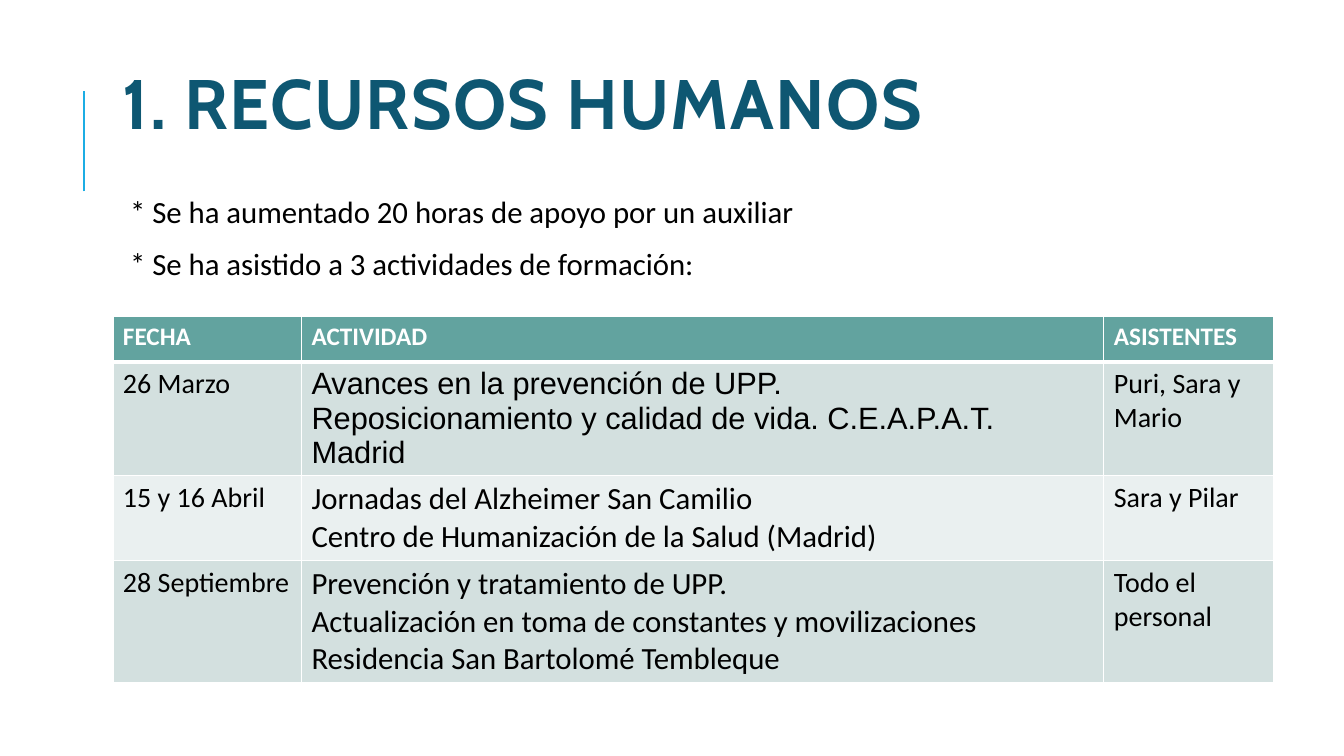
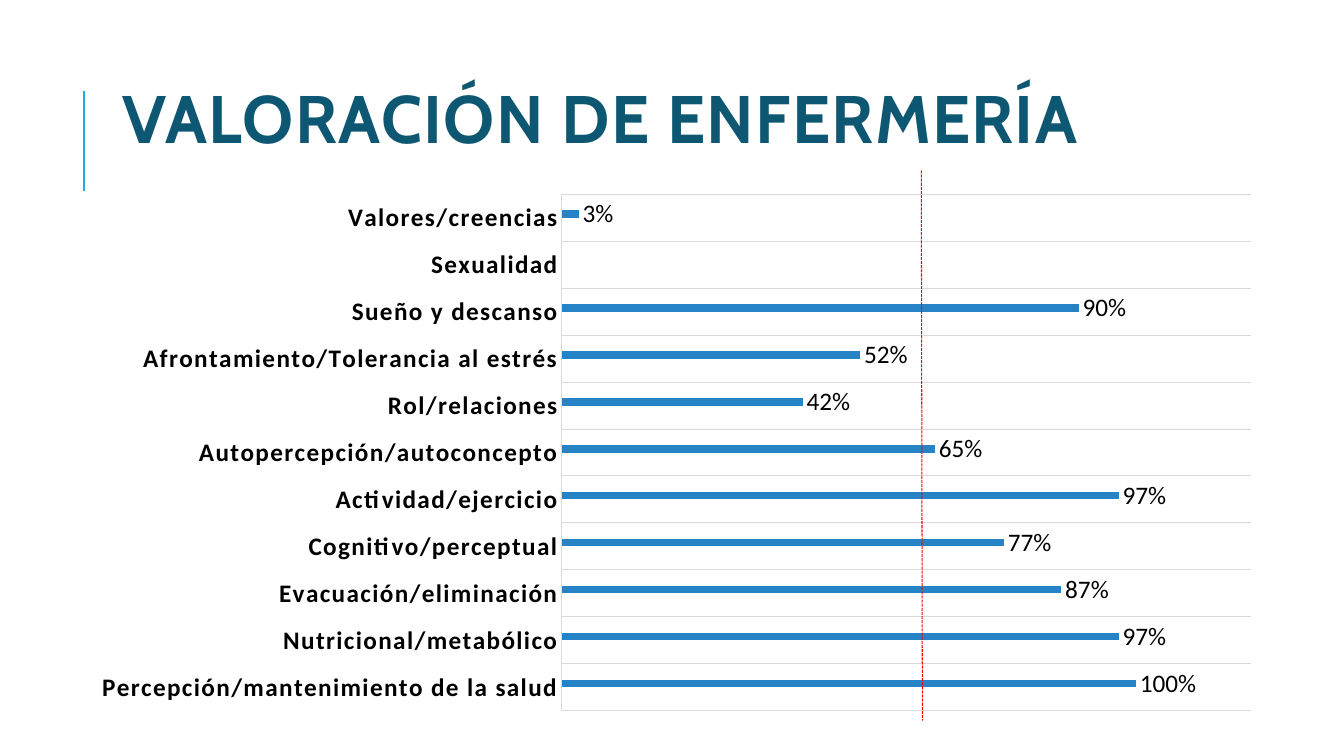
from dataclasses import dataclass

import lxml.etree
import pptx
import pptx.chart.data
import pptx.dml.color
import pptx.enum.chart
import pptx.enum.dml
import pptx.enum.shapes
import pptx.enum.text
import pptx.oxml.ns
import pptx.presentation
import pptx.shapes.base
import pptx.shapes.connector
import pptx.slide
import pptx.util

SLIDE_WIDTH = pptx.util.Inches(13.333)
SLIDE_HEIGHT = pptx.util.Inches(7.5)
TITLE_AND_BODY, TITLE_ONLY = 1, 5
BODY_FONT = "Calibri"
TITLE_FONT = "Cabin"
LETTER_SPACING = "100"
COLORS = {
    "title": "0E5772",
    "accent": "1CADE4",
    "text": "000000",
    "white": "FFFFFF",
    "header": "62A39F",
    "band_dark": "D3E0DF",
    "band_light": "EAF0F0",
    "bar": "2683C6",
    "grid": "D9D9D9",
    "threshold": "FF0000",
}


def across(percent: float) -> int:
    return round(SLIDE_WIDTH * percent / 100)


def down(percent: float) -> int:
    return round(SLIDE_HEIGHT * percent / 100)


@dataclass(frozen=True)
class Box:
    """Shares of the slide's width and height, in percent."""

    left: float
    top: float
    width: float
    height: float

    def lengths(self) -> tuple[int, int, int, int]:
        return across(self.left), down(self.top), across(self.width), down(self.height)


@dataclass(frozen=True)
class Rule:
    begin: tuple[float, float]
    end: tuple[float, float]
    color: str
    width: float
    dash: pptx.enum.dml.MSO_LINE = pptx.enum.dml.MSO_LINE.SOLID


@dataclass(frozen=True)
class Activity:
    date: str
    description: str
    attendees: str
    description_font: str = BODY_FONT


@dataclass(frozen=True)
class Pattern:
    name: str
    percent: int | None


TITLE_RULE = Rule((6.25, 25.33), (6.25, 12), "accent", 1.5)
THRESHOLD_RULE = Rule(
    (68.55, 22.53), (68.63, 95.33), "threshold", 0.75, pptx.enum.dml.MSO_LINE.SQUARE_DOT
)

STAFF_POINTS = (
    "* Se ha aumentado 20 horas de apoyo por un auxiliar",
    "* Se ha asistido a 3 actividades de formación:",
)
COLUMN_WIDTHS = (14.03, 59.7, 12.6)
ROW_HEIGHTS = (6, 10.67, 10.67, 15.2)
HEADINGS = ("FECHA", "ACTIVIDAD", "ASISTENTES")
ACTIVITIES = (
    Activity(
        "26 Marzo",
        "Avances en la prevención de UPP.\n"
        "Reposicionamiento y calidad de vida. C.E.A.P.A.T. Madrid",
        "Puri, Sara y Mario",
        "Arial",
    ),
    Activity(
        "15 y 16 Abril",
        "Jornadas del Alzheimer San Camilio\nCentro de Humanización de la Salud (Madrid)",
        "Sara y Pilar",
    ),
    Activity(
        "28 Septiembre",
        "Prevención y tratamiento de UPP.\n"
        "Actualización en toma de constantes y movilizaciones\n"
        "Residencia San Bartolomé Tembleque",
        "Todo el personal",
    ),
)
PATTERNS = (
    Pattern("Percepción/mantenimiento de la salud", 100),
    Pattern("Nutricional/metabólico", 97),
    Pattern("Evacuación/eliminación", 87),
    Pattern("Cognitivo/perceptual", 77),
    Pattern("Actividad/ejercicio", 97),
    Pattern("Autopercepción/autoconcepto", 65),
    Pattern("Rol/relaciones", 42),
    Pattern("Afrontamiento/Tolerancia al estrés", 52),
    Pattern("Sueño y descanso", 90),
    Pattern("Sexualidad", None),
    Pattern("Valores/creencias", 3),
)


def rgb(name: str) -> pptx.dml.color.RGBColor:
    return pptx.dml.color.RGBColor.from_string(COLORS[name])


def add_child(parent: lxml.etree.ElementBase, tag: str, **attributes: str):
    return lxml.etree.SubElement(parent, pptx.oxml.ns.qn(tag), **attributes)


def format_font(font, size: float, color: str = "text", bold: bool = False,
                name: str = BODY_FONT) -> None:
    font.name = name
    font.size = pptx.util.Pt(size)
    font.bold = bold
    font.color.rgb = rgb(color)


def place(shape: pptx.shapes.base.BaseShape, box: Box) -> None:
    shape.left, shape.top, shape.width, shape.height = box.lengths()


def add_rule(slide: pptx.slide.Slide, rule: Rule) -> pptx.shapes.connector.Connector:
    connector = slide.shapes.add_connector(
        pptx.enum.shapes.MSO_CONNECTOR.STRAIGHT,
        across(rule.begin[0]), down(rule.begin[1]),
        across(rule.end[0]), down(rule.end[1]),
    )
    connector.line.color.rgb = rgb(rule.color)
    connector.line.width = pptx.util.Pt(rule.width)
    connector.line.dash_style = rule.dash
    add_child(connector.element.spPr, "a:effectLst")
    return connector


def add_master_rule(presentation: pptx.presentation.Presentation,
                    slide: pptx.slide.Slide) -> None:
    element = add_rule(slide, TITLE_RULE).element
    element.xpath("./p:nvCxnSpPr/p:cNvPr")[0].set("id", "20")
    presentation.slide_master.shapes.element.append(element)


def add_titled_slide(presentation: pptx.presentation.Presentation, layout: int,
                     text: str, box: Box, size: float) -> pptx.slide.Slide:
    slide = presentation.slides.add_slide(presentation.slide_layouts[layout])
    title = slide.shapes.title
    place(title, box)
    title.text_frame.text = text
    title.text_frame.auto_size = pptx.enum.text.MSO_AUTO_SIZE.NONE
    title.text_frame.vertical_anchor = pptx.enum.text.MSO_ANCHOR.MIDDLE
    paragraph = title.text_frame.paragraphs[0]
    paragraph.alignment = pptx.enum.text.PP_ALIGN.LEFT
    paragraph.line_spacing = 0.8
    format_font(paragraph.runs[0].font, size, "title", True, TITLE_FONT)
    title.element.xpath(".//a:rPr")[0].set("spc", LETTER_SPACING)
    return slide


def fill_body(slide: pptx.slide.Slide, box: Box) -> None:
    body = slide.placeholders[1]
    place(body, box)
    frame = body.text_frame
    frame.text = "\n".join(STAFF_POINTS)
    frame.auto_size = pptx.enum.text.MSO_AUTO_SIZE.NONE
    frame.margin_left = frame.margin_right = pptx.util.Inches(0.05)
    for paragraph in frame.paragraphs:
        paragraph.line_spacing = 0.9
        paragraph.space_before = pptx.util.Pt(12)
        paragraph.space_after = pptx.util.Pt(2)
        format_font(paragraph.runs[0].font, 22)
    for properties in body.element.xpath(".//a:pPr"):
        properties.set("marL", str(pptx.util.Inches(0.12)))
        properties.set("indent", "0")
        add_child(properties, "a:buNone")


def add_cell_borders(cell_element, row: int) -> None:
    properties = cell_element.get_or_add_tcPr()
    thick_side = {0: "B", 1: "T"}.get(row)
    for side in "LRTB":
        width = pptx.util.Pt(3 if side == thick_side else 1)
        border = add_child(properties, f"a:ln{side}", w=str(width))
        add_child(add_child(border, "a:solidFill"), "a:srgbClr", val=COLORS["white"])


def add_activity_table(slide: pptx.slide.Slide, left: float, top: float) -> None:
    box = Box(left, top, sum(COLUMN_WIDTHS), sum(ROW_HEIGHTS))
    frame = slide.shapes.add_table(len(ROW_HEIGHTS), len(COLUMN_WIDTHS), *box.lengths())
    table = frame.table
    for column, width in zip(table.columns, COLUMN_WIDTHS):
        column.width = across(width)
    for table_row, height in zip(table.rows, ROW_HEIGHTS):
        table_row.height = down(height)
    texts = [*HEADINGS]
    for activity in ACTIVITIES:
        texts += [activity.date, activity.description, activity.attendees]
    cells = zip(table.iter_cells(), frame.element.xpath(".//a:tc"), texts)
    for index, (cell, element, text) in enumerate(cells):
        row, column = divmod(index, len(COLUMN_WIDTHS))
        add_cell_borders(element, row)
        cell.fill.solid()
        band = "band_dark" if row % 2 else "band_light"
        cell.fill.fore_color.rgb = rgb(band if row else "header")
        cell.text_frame.text = text
        for paragraph in cell.text_frame.paragraphs:
            font = paragraph.runs[0].font
            if row == 0:
                format_font(font, 18, "white", True)
            elif column == 1:
                format_font(font, 22, name=ACTIVITIES[row - 1].description_font)
            else:
                format_font(font, 20)


def set_plot_area(chart, shares: dict[str, float]) -> None:
    plot_area = chart.element.xpath(".//c:plotArea")[0]
    for layout in plot_area.xpath("./c:layout"):
        plot_area.remove(layout)
    layout = lxml.etree.Element(pptx.oxml.ns.qn("c:layout"))
    plot_area.insert(0, layout)
    manual = add_child(layout, "c:manualLayout")
    settings = {"layoutTarget": "inner", "xMode": "edge", "yMode": "edge", **shares}
    for name, value in settings.items():
        add_child(manual, f"c:{name}", val=str(value))


def add_pattern_chart(slide: pptx.slide.Slide, box: Box) -> None:
    data = pptx.chart.data.CategoryChartData(number_format='0"%"')
    data.categories = [pattern.name for pattern in PATTERNS]
    data.add_series("Series 1", [None] * len(PATTERNS))
    data.add_series("Series 2", [pattern.percent for pattern in PATTERNS])
    chart = slide.shapes.add_chart(
        pptx.enum.chart.XL_CHART_TYPE.BAR_CLUSTERED, *box.lengths(), data
    ).chart
    chart.has_legend = False
    chart.has_title = False
    format_font(chart.font, 10)
    plot = chart.plots[0]
    plot.gap_width = 444
    plot.overlap = 0
    plot.vary_by_categories = False
    for series, color in zip(plot.series, ("accent", "bar")):
        series.format.fill.solid()
        series.format.fill.fore_color.rgb = rgb(color)
        labels = series.data_labels
        labels.show_value = True
        labels.position = pptx.enum.chart.XL_LABEL_POSITION.OUTSIDE_END
        format_font(labels.font, 18)
    categories = chart.category_axis
    categories.major_tick_mark = pptx.enum.chart.XL_TICK_MARK.NONE
    categories.has_major_gridlines = True
    for line in (categories.format.line, categories.major_gridlines.format.line):
        line.color.rgb = rgb("grid")
        line.width = pptx.util.Pt(0.75)
    format_font(categories.tick_labels.font, 18, bold=True)
    chart.element.xpath(".//c:catAx//a:defRPr")[0].set("spc", LETTER_SPACING)
    values = chart.value_axis
    values.minimum_scale, values.maximum_scale = 0, 120
    values.has_major_gridlines = False
    values.visible = False
    set_plot_area(chart, {"x": 0.41, "y": 0.02, "w": 0.57, "h": 0.96})


def main() -> None:
    presentation = pptx.Presentation()
    presentation.slide_width, presentation.slide_height = SLIDE_WIDTH, SLIDE_HEIGHT

    staff = add_titled_slide(presentation, TITLE_AND_BODY, "1. RECURSOS HUMANOS",
                             Box(8.4, 3.47, 79.73, 21.87), 50)
    add_master_rule(presentation, staff)
    fill_body(staff, Box(8.4, 25.33, 79.73, 58.67))
    add_activity_table(staff, 8.4, 41.87)

    assessment = add_titled_slide(presentation, TITLE_ONLY, "VALORACIÓN DE ENFERMERÍA",
                                  Box(8.4, 8.53, 79.73, 15.73), 48)
    add_pattern_chart(assessment, Box(4.88, 24.27, 90, 71.2))
    add_rule(assessment, THRESHOLD_RULE)
    presentation.save("out.pptx")


if __name__ == "__main__":
    main()
